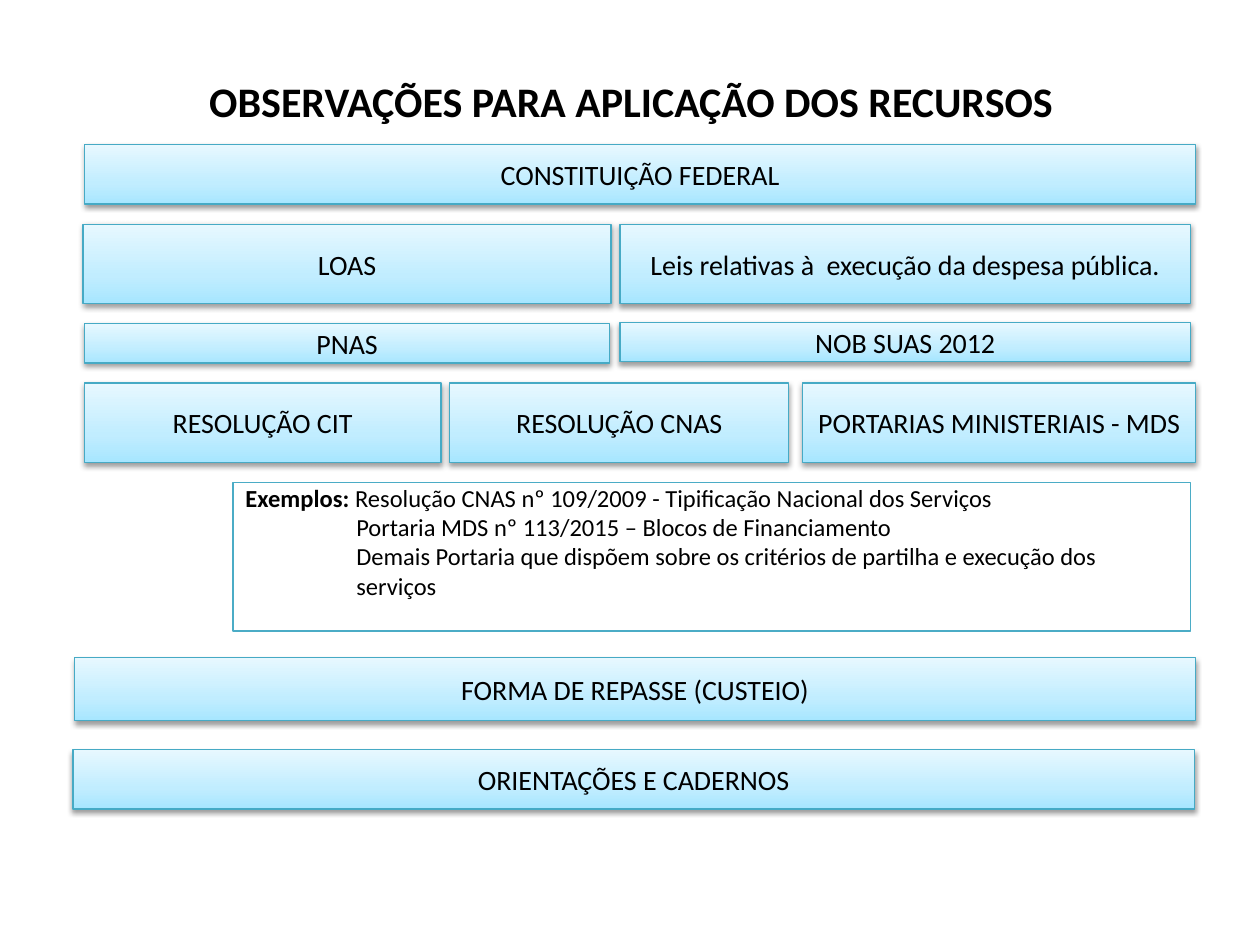
from pptx import Presentation
from pptx.dml.color import RGBColor
from pptx.enum.shapes import MSO_SHAPE
from pptx.enum.text import MSO_ANCHOR, PP_ALIGN
from pptx.oxml import parse_xml
from pptx.oxml.ns import nsdecls, qn
from pptx.util import Inches, Pt

THEME = {
    "font": "Calibri",
    "text": "000000",
    "paper": "FFFFFF",
    "edge": "46AAC5",
    "frame": "4BACC6",
    "fade": [(0, "A7E6FF"), (35, "C1EDFF"), (100, "E7F8FF")],
    "title": 24,
    "label": 16,
    "note": 14,
}

TITLE = "OBSERVAÇÕES PARA APLICAÇÃO DOS RECURSOS"

# Each row: height, then its boxes as (left, top, width, label)
ROWS = [
    (0.47, [(0.67, 1.15, 8.82, "CONSTITUIÇÃO FEDERAL")]),
    (0.63, [(0.66, 1.78, 4.19, "LOAS"),
            (4.92, 1.78, 4.53, "Leis relativas à  execução da despesa pública.")]),
    (0.31, [(0.67, 2.57, 4.17, "PNAS"),
            (4.92, 2.56, 4.53, "NOB SUAS 2012")]),
    (0.63, [(0.67, 3.04, 2.83, "RESOLUÇÃO CIT"),
            (3.57, 3.04, 2.69, "RESOLUÇÃO CNAS"),
            (6.37, 3.04, 3.12, "PORTARIAS MINISTERIAIS - MDS")]),
    (0.50, [(0.59, 5.22, 8.9, "FORMA DE REPASSE (CUSTEIO)")]),
    (0.47, [(0.58, 5.95, 8.9, "ORIENTAÇÕES E CADERNOS")]),
]

LEAD = "Exemplos: "
NOTES = [
    "Resolução CNAS nº 109/2009 - Tipificação Nacional dos Serviços",
    "Portaria MDS nº 113/2015 – Blocos de Financiamento",
    "Demais Portaria que dispõem sobre os critérios de partilha e execução dos serviços",
]


def style(par, size, bold=None, align=PP_ALIGN.LEFT):
    par.alignment = align
    par.font.name = THEME["font"]
    par.font.size = Pt(THEME[size])
    par.font.bold = bold
    par.font.color.rgb = RGBColor.from_string(THEME["text"])


def add_box(slide, kind, place, edge, width):
    box = slide.shapes.add_shape(kind, *map(Inches, place))
    box.shadow.inherit = False
    box.line.color.rgb = RGBColor.from_string(THEME[edge])
    box.line.width = Pt(width)
    box.text_frame.word_wrap = True
    return box


def shade(box):
    """Give the box the three-stop fade and a soft shadow below it."""
    box.fill.gradient()
    box.fill.gradient_angle = 90
    props = box._element.spPr
    stops = props.find(qn("a:gradFill")).find(qn("a:gsLst"))
    for stop in list(stops):
        stops.remove(stop)
    for pos, color in THEME["fade"]:
        stops.append(parse_xml(
            f'<a:gs {nsdecls("a")} pos="{pos * 1000}"><a:srgbClr val="{color}"/></a:gs>'))
    props.find(qn("a:effectLst")).append(parse_xml(
        f'<a:outerShdw {nsdecls("a")} blurRad="{Pt(3.1)}" dist="{Pt(1.6)}" '
        'dir="5400000" rotWithShape="0"><a:srgbClr val="000000">'
        '<a:alpha val="38000"/></a:srgbClr></a:outerShdw>'))


def add_title(slide):
    box = slide.shapes.add_textbox(*map(Inches, (0.01, 0.49, 10, 0.54)))
    box.text_frame.word_wrap = True
    par = box.text_frame.paragraphs[0]
    par.text = TITLE
    par.line_spacing = 1.15
    par.space_after = Pt(10)
    style(par, "title", True, PP_ALIGN.CENTER)


def add_rows(slide):
    for high, cells in ROWS:
        for left, top, wide, label in cells:
            place = (left, top, wide, high)
            box = add_box(slide, MSO_SHAPE.FLOWCHART_PROCESS, place, "edge", 0.75)
            shade(box)
            frame = box.text_frame
            frame.vertical_anchor = MSO_ANCHOR.MIDDLE
            frame.text = label
            style(frame.paragraphs[0], "label", align=PP_ALIGN.CENTER)


def add_notes(slide):
    box = add_box(slide, MSO_SHAPE.RECTANGLE, (1.85, 3.83, 7.6, 1.18), "frame", 1)
    box.fill.solid()
    box.fill.fore_color.rgb = RGBColor.from_string(THEME["paper"])
    frame = box.text_frame
    frame.vertical_anchor = MSO_ANCHOR.TOP
    frame.margin_top = 0
    for i, note in enumerate(NOTES):
        par = frame.add_paragraph() if i else frame.paragraphs[0]
        style(par, "note")
        if i:
            par._p.get_or_add_pPr().set("marL", str(Inches(0.88)))
        else:
            run = par.add_run()
            run.text = LEAD
            run.font.bold = True
        par.add_run().text = note


def main():
    deck = Presentation()
    deck.slide_width, deck.slide_height = Inches(10), Inches(7.5)
    slide = deck.slides.add_slide(deck.slide_layouts[6])
    add_title(slide)
    add_rows(slide)
    add_notes(slide)
    deck.save("out.pptx")


if __name__ == "__main__":
    main()
